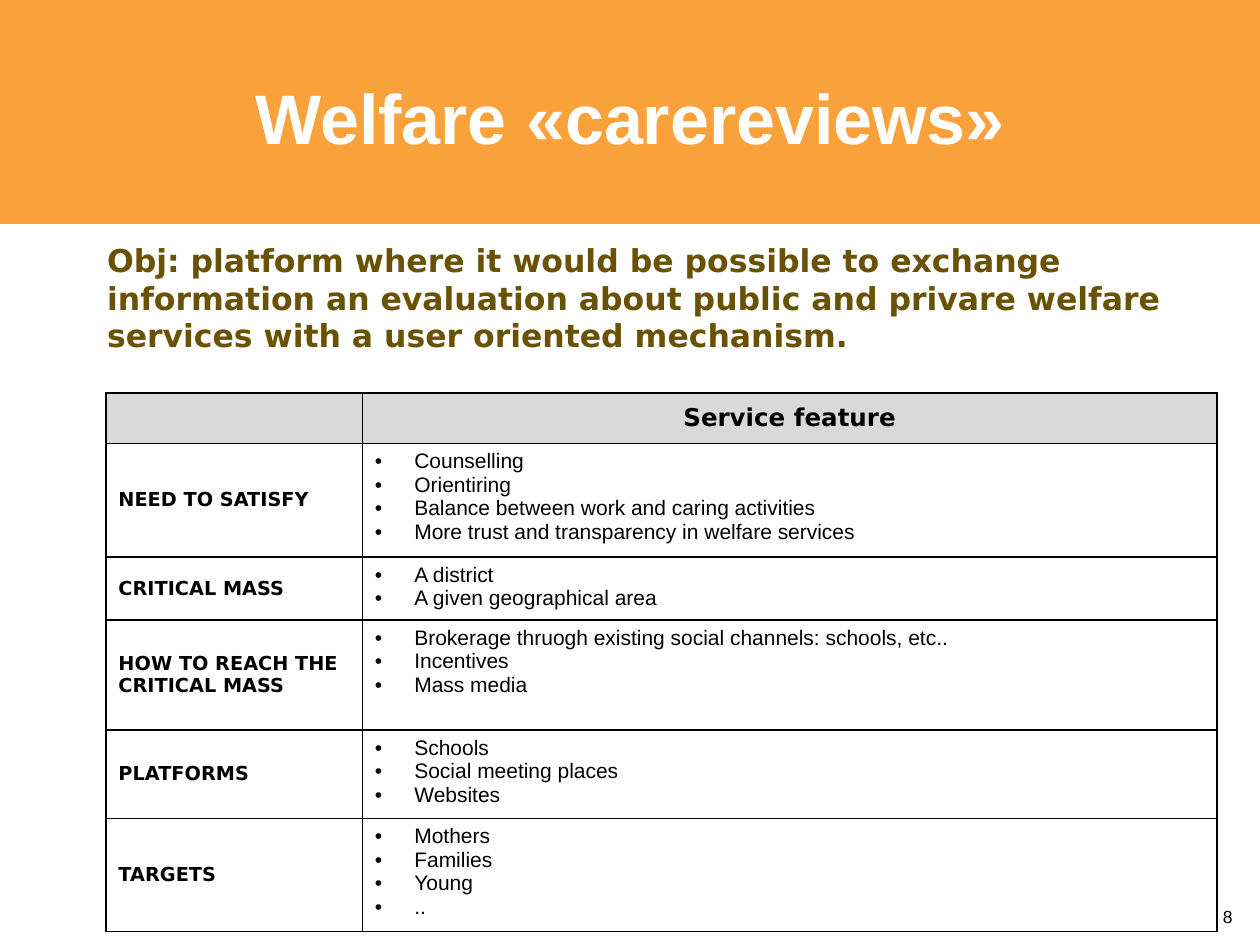
from dataclasses import dataclass

from lxml.etree import SubElement
from pptx import Presentation
from pptx.dml.color import RGBColor as RGB
from pptx.enum.shapes import MSO_SHAPE as Shape
from pptx.enum.text import MSO_ANCHOR as Anchor, MSO_AUTO_SIZE as AutoSize, PP_ALIGN as Align
from pptx.oxml.ns import qn
from pptx.util import Pt


@dataclass(frozen=True)
class Theme:
    orange: RGB = RGB(0xF9, 0xA1, 0x3A)
    olive: RGB = RGB(0x69, 0x52, 0x03)
    grey: RGB = RGB(0xD9, 0xD9, 0xD9)
    white: RGB = RGB(0xFF, 0xFF, 0xFF)
    black: RGB = RGB(0, 0, 0)
    sans: str = "Arial"
    heading: str = "DejaVu Sans"
    title_size: int = 40
    objective_size: int = 18
    header_size: int = 14
    item_size: int = 12
    label_size: int = 11
    number_size: int = 10


class SlideBuilder:
    """Draws themed elements on one slide, with lengths in points."""

    def __init__(self, slide, theme):
        self.slide = slide
        self.theme = theme

    def place(self, element, left, top, width, height):
        element.left, element.top = Pt(left), Pt(top)
        element.width, element.height = Pt(width), Pt(height)

    def style(self, paragraph, size, font, color, bold=False, align=Align.LEFT):
        paragraph.alignment = align
        paragraph.space_before = Pt(0)
        for run in paragraph.runs:
            run.font.size, run.font.name, run.font.bold = Pt(size), font, bold
            run.font.color.rgb = color

    def indent(self, paragraph, hanging=0, bullet=None):
        properties = paragraph._p.get_or_add_pPr()
        properties.set("marL", str(Pt(hanging)))
        properties.set("indent", str(-Pt(hanging)))
        if bullet:
            SubElement(properties, qn("a:buFont"), typeface=self.theme.sans)
            SubElement(properties, qn("a:buChar"), char=bullet)
        else:
            SubElement(properties, qn("a:buNone"))

    def band(self, *box):
        band = self.slide.shapes.add_shape(Shape.RECTANGLE, *map(Pt, box))
        band.shadow.inherit = False
        band.fill.solid()
        band.fill.fore_color.rgb = self.theme.orange
        band.line.fill.background()
        self.slide.shapes._spTree.insert(2, band._element)

    def title(self, text, *box):
        title = self.slide.shapes.title
        self.place(title, *box)
        frame = title.text_frame
        frame.text = text
        frame.vertical_anchor, frame.auto_size = Anchor.MIDDLE, AutoSize.NONE
        self.style(frame.paragraphs[0], self.theme.title_size, self.theme.sans,
                   self.theme.white, True, Align.CENTER)

    def objective(self, text, *box):
        body = self.slide.placeholders[1]
        self.place(body, *box)
        frame = body.text_frame
        frame.text = text
        frame.auto_size = AutoSize.NONE
        self.indent(frame.paragraphs[0])
        self.style(frame.paragraphs[0], self.theme.objective_size, self.theme.heading,
                   self.theme.olive, True)

    def page_number(self, text, *box):
        frame = self.slide.shapes.add_textbox(*map(Pt, box)).text_frame
        frame.text = text
        frame.word_wrap = True
        self.style(frame.paragraphs[0], self.theme.number_size, self.theme.sans,
                   self.theme.black, align=Align.RIGHT)

    def frame_cell(self, cell, fill):
        properties = cell._tc.get_or_add_tcPr()
        for side in ("a:lnL", "a:lnR", "a:lnT", "a:lnB"):
            border = SubElement(properties, qn(side), w=str(Pt(1)))
            color = SubElement(border, qn("a:solidFill"))
            SubElement(color, qn("a:srgbClr"), val=str(self.theme.black))
        cell.fill.solid()
        cell.fill.fore_color.rgb = fill

    def label_cell(self, cell, text, size, fill, align=Align.LEFT):
        self.frame_cell(cell, fill)
        cell.vertical_anchor = Anchor.MIDDLE
        cell.text_frame.text = text
        self.style(cell.text_frame.paragraphs[0], size, self.theme.heading,
                   self.theme.black, True, align)

    def list_cell(self, cell, items):
        self.frame_cell(cell, self.theme.white)
        cell.text_frame.text = "\n".join(items)
        for paragraph in cell.text_frame.paragraphs:
            self.indent(paragraph, 22.5, "•")
            self.style(paragraph, self.theme.item_size, self.theme.sans, self.theme.black)

    def feature_table(self, header, features, left, top, widths, heights):
        table = self.slide.shapes.add_table(
            len(heights), len(widths), Pt(left), Pt(top),
            Pt(sum(widths)), Pt(sum(heights))).table
        table.first_row = table.horz_banding = False
        for column, width in zip(table.columns, widths):
            column.width = Pt(width)
        for row, height in zip(table.rows, heights):
            row.height = Pt(height)
        self.frame_cell(table.cell(0, 0), self.theme.grey)
        self.label_cell(table.cell(0, 1), header, self.theme.header_size,
                        self.theme.grey, Align.CENTER)
        for index, (label, items) in enumerate(features.items(), 1):
            self.label_cell(table.cell(index, 0), label, self.theme.label_size,
                            self.theme.white)
            self.list_cell(table.cell(index, 1), items)


FEATURES = {
    "NEED TO SATISFY": [
        "Counselling", "Orientiring", "Balance between work and caring activities",
        "More trust and transparency in welfare services"],
    "CRITICAL MASS": ["A district", "A given geographical area"],
    "HOW TO REACH THE CRITICAL MASS": [
        "Brokerage thruogh existing social channels: schools, etc..",
        "Incentives", "Mass media"],
    "PLATFORMS": ["Schools", "Social meeting places", "Websites"],
    "TARGETS": ["Mothers", "Families", "Young", ".."],
}


def main():
    deck = Presentation()
    deck.slide_width, deck.slide_height = Pt(720), Pt(540)
    builder = SlideBuilder(deck.slides.add_slide(deck.slide_layouts[1]), Theme())
    builder.band(0, 0, 720, 128)
    builder.title("Welfare «carereviews»", 36, 21.6, 648, 90)
    builder.objective(
        "Obj: platform where it would be possible to exchange information an evaluation "
        "about public and privare welfare services with a user oriented mechanism.",
        54, 134, 648, 81.4)
    builder.page_number("8", 607.7, 514, 103.7, 17.3)
    builder.feature_table("Service feature", FEATURES, 60.5, 224.6,
                          [146.6, 488.4], [28.3, 60.9, 35.4, 62.9, 47.4, 61.1])
    deck.save("out.pptx")


if __name__ == "__main__":
    main()
